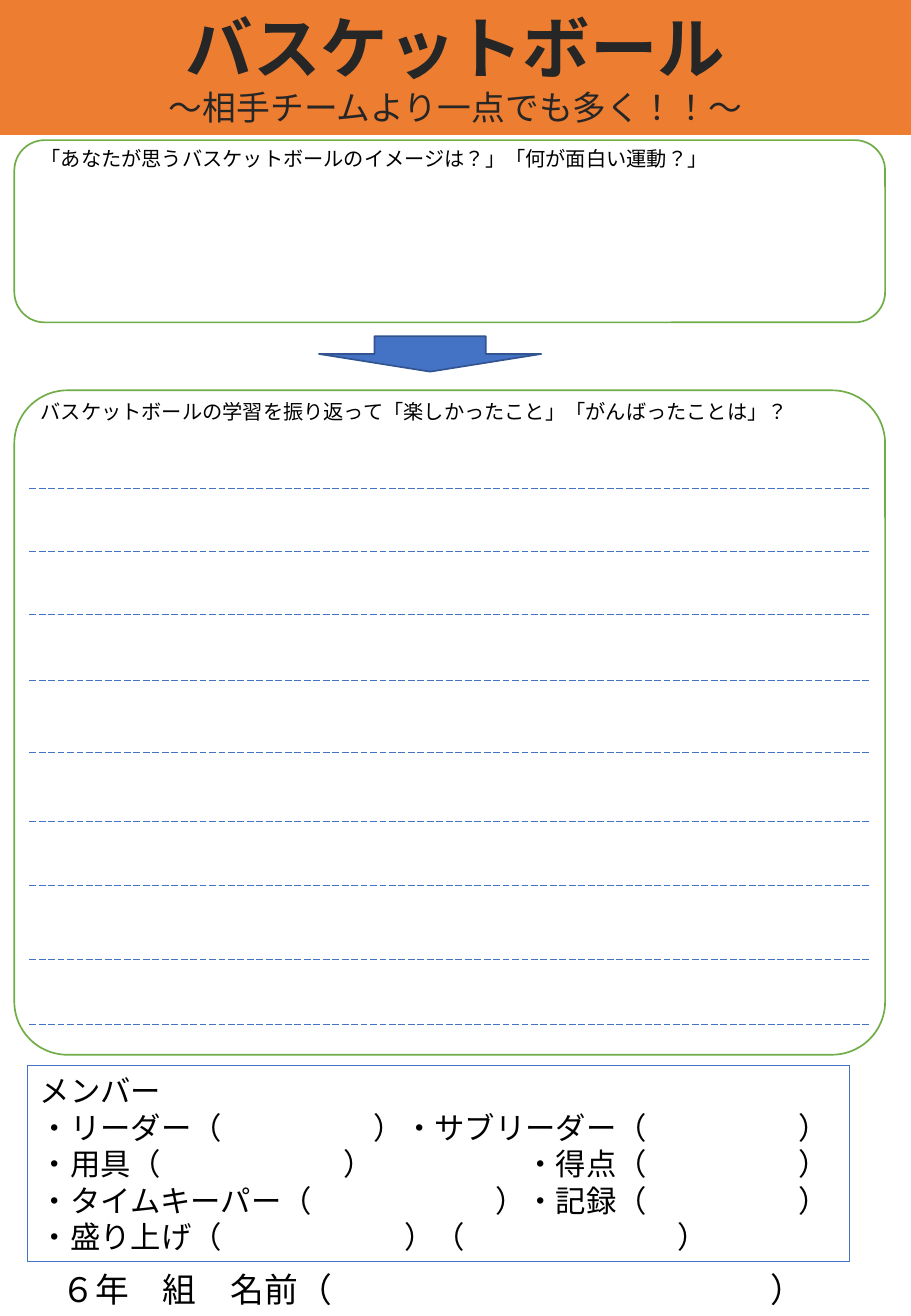
from dataclasses import dataclass

from lxml import etree
from pptx import Presentation
from pptx.dml.color import RGBColor
from pptx.enum.dml import MSO_LINE
from pptx.enum.lang import MSO_LANGUAGE_ID
from pptx.enum.shapes import MSO_CONNECTOR, MSO_SHAPE
from pptx.enum.text import MSO_ANCHOR, MSO_AUTO_SIZE, PP_ALIGN
from pptx.oxml.ns import qn
from pptx.util import Cm, Pt

RECTANGLE = MSO_SHAPE.RECTANGLE
ROUNDED = MSO_SHAPE.ROUNDED_RECTANGLE
DOWN_ARROW = MSO_SHAPE.DOWN_ARROW
STRAIGHT = MSO_CONNECTOR.STRAIGHT
LONG_DASH = MSO_LINE.LONG_DASH
CENTER, LEFT = PP_ALIGN.CENTER, PP_ALIGN.LEFT
TOP, MIDDLE = MSO_ANCHOR.TOP, MSO_ANCHOR.MIDDLE
NO_AUTOFIT = MSO_AUTO_SIZE.NONE
JAPANESE = MSO_LANGUAGE_ID.JAPANESE

FONT = "Noto Sans CJK JP"
LINE_HEIGHT = 1.2
TITLE_ONLY = 5
COLORS = {
    "orange": "ED7D31",
    "heading": "262626",
    "text": "000000",
    "green": "70AD47",
    "blue": "4472C4",
    "dark_blue": "325491",
    "white": "FFFFFF",
}


@dataclass(frozen=True)
class Area:
    """Left, top, width and height in centimetres."""
    left: float
    top: float
    width: float
    height: float

    def lengths(self) -> tuple:
        return Cm(self.left), Cm(self.top), Cm(self.width), Cm(self.height)


@dataclass(frozen=True)
class Outline:
    kind: int
    area: Area
    line: str
    width: float = 1
    fill: str | None = None
    corner: float | None = None


@dataclass(frozen=True)
class Entry:
    """A line of text; tabs are counted in full-width characters."""
    text: str
    size: int
    tabs: tuple[int, ...] = ()
    color: str = "text"
    bold: bool = False
    align: int = LEFT


TITLE_AREA = Area(0, 0, 19.05, 2.82)
TITLE = [
    Entry("バスケットボール", 40, color="heading", bold=True, align=CENTER),
    Entry("〜相手チームより一点でも多く！！〜", 20, color="heading", align=CENTER),
]
MEMBER_AREA = Area(0.58, 22.27, 17.18, 4.11)
MEMBERS = [
    Entry("メンバー", 18),
    Entry("・リーダー（\t）・サブリーダー（\t）", 18, (11, 25)),
    Entry("・用具（\t）\t・得点（\t）", 18, (10, 16, 25)),
    Entry("・タイムキーパー（\t）・記録（\t）", 18, (15, 25)),
    Entry("・盛り上げ（\t）（\t）", 18, (12, 21)),
]
LABELS = [
    (Area(0.6, 2.94, 16.76, 0.76),
     Entry("「あなたが思うバスケットボールのイメージは？」「何が面白い運動？」", 12)),
    (Area(0.6, 8.23, 16.76, 0.76),
     Entry("バスケットボールの学習を振り返って「楽しかったこと」「がんばったことは」？", 12)),
    (Area(1.04, 26.4, 16.89, 1.09),
     Entry("６年　組　名前（\t）", 20, (21,))),
]
OUTLINES = [
    Outline(ROUNDED, Area(0.3, 2.93, 18.21, 3.81), "green"),
    Outline(ROUNDED, Area(0.3, 8.16, 18.21, 13.89), "green", corner=0.08),
    Outline(DOWN_ARROW, Area(6.67, 7.03, 4.65, 0.74), "dark_blue", fill="blue"),
]
RULE_LEFT, RULE_RIGHT = 0.61, 18.21
RULE_TOPS = [10.21, 11.53, 12.85, 14.22, 15.72, 17.18, 18.5, 20.05, 21.42]


def rgb(name: str) -> RGBColor:
    return RGBColor.from_string(COLORS[name])


def add_tabs(paragraph, entry: Entry) -> None:
    properties = paragraph._p.get_or_add_pPr()
    tab_list = etree.SubElement(properties, qn("a:tabLst"))
    for position in entry.tabs:
        etree.SubElement(tab_list, qn("a:tab"),
                         pos=str(Pt(position * entry.size)), algn="l")


def add_text_outline(run) -> None:
    properties = run._r.get_or_add_rPr()
    line = etree.Element(qn("a:ln"), w=str(Pt(1.06)))
    fill = etree.SubElement(line, qn("a:solidFill"))
    etree.SubElement(fill, qn("a:srgbClr"), val=COLORS["white"])
    properties.insert(0, line)


def write(frame, entries: list[Entry], anchor: int = TOP) -> None:
    frame.text = "\n".join(entry.text for entry in entries)
    frame.word_wrap = True
    frame.auto_size = NO_AUTOFIT
    frame.vertical_anchor = anchor
    frame.margin_right = 0
    for paragraph, entry in zip(frame.paragraphs, entries):
        if entry.tabs:
            add_tabs(paragraph, entry)
        paragraph.alignment = entry.align
        paragraph.line_spacing = Pt(entry.size * LINE_HEIGHT)
        for run in paragraph.runs:
            run.font.size = Pt(entry.size)
            run.font.bold = entry.bold
            run.font.name = FONT
            run.font.language_id = JAPANESE
            run.font.color.rgb = rgb(entry.color)
            etree.SubElement(run._r.get_or_add_rPr(), qn("a:ea"), typeface=FONT)


def draw_title(slide) -> None:
    banner = slide.shapes.title
    banner.left, banner.top, banner.width, banner.height = TITLE_AREA.lengths()
    banner.fill.solid()
    banner.fill.fore_color.rgb = rgb("orange")
    frame = banner.text_frame
    write(frame, TITLE, MIDDLE)
    frame.margin_left = 0
    frame.margin_top, frame.margin_bottom = Cm(0.1), Cm(0.13)
    for paragraph in frame.paragraphs:
        for run in paragraph.runs:
            add_text_outline(run)


def draw_outline(slide, outline: Outline):
    shape = slide.shapes.add_shape(outline.kind, *outline.area.lengths())
    shape.shadow.inherit = False
    if outline.fill:
        shape.fill.solid()
        shape.fill.fore_color.rgb = rgb(outline.fill)
    else:
        shape.fill.background()
    shape.line.color.rgb = rgb(outline.line)
    shape.line.width = Pt(outline.width)
    if outline.corner is not None:
        shape.adjustments[0] = outline.corner
    return shape


def draw_writing_line(slide, top: float) -> None:
    rule = slide.shapes.add_connector(
        STRAIGHT, Cm(RULE_LEFT), Cm(top), Cm(RULE_RIGHT), Cm(top))
    rule.line.color.rgb = rgb("blue")
    rule.line.width = Pt(0.5)
    rule.line.dash_style = LONG_DASH
    etree.SubElement(rule._element.spPr, qn("a:effectLst"))


def main() -> None:
    deck = Presentation()
    deck.slide_width, deck.slide_height = Cm(19.05), Cm(27.51)
    slide = deck.slides.add_slide(deck.slide_layouts[TITLE_ONLY])
    draw_title(slide)
    for outline in OUTLINES:
        draw_outline(slide, outline)
    for area, entry in LABELS:
        label = slide.shapes.add_textbox(*area.lengths())
        write(label.text_frame, [entry])
    for top in RULE_TOPS:
        draw_writing_line(slide, top)
    members = draw_outline(slide, Outline(RECTANGLE, MEMBER_AREA, "blue", 0.75))
    write(members.text_frame, MEMBERS, MIDDLE)
    deck.save("out.pptx")


if __name__ == "__main__":
    main()
